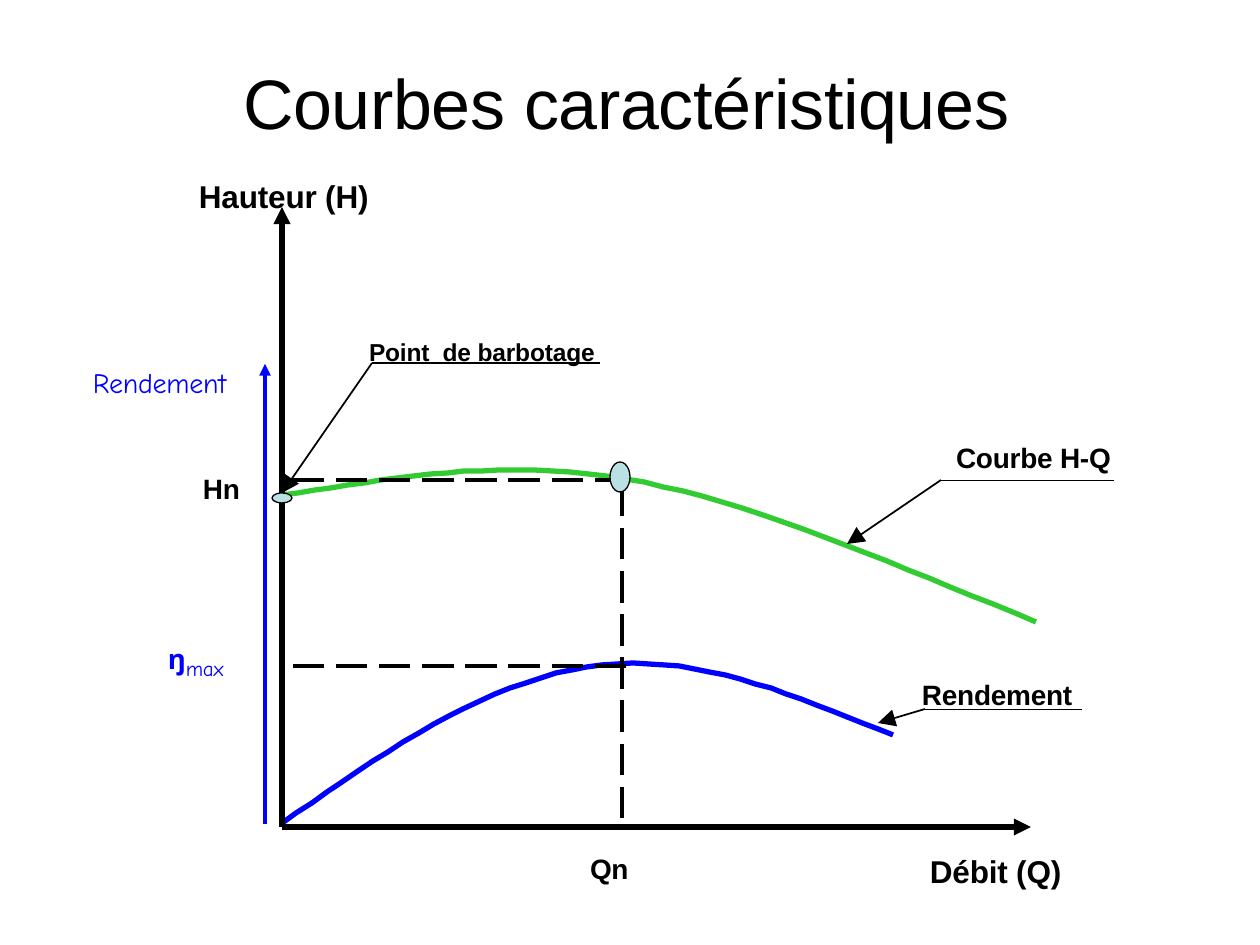
from lxml import etree
from pptx import Presentation
from pptx.dml.color import RGBColor
from pptx.enum.dml import MSO_LINE
from pptx.enum.shapes import MSO_CONNECTOR, MSO_SHAPE
from pptx.enum.text import MSO_ANCHOR, PP_ALIGN
from pptx.oxml.ns import qn
from pptx.util import Pt

STRAIGHT = MSO_CONNECTOR.STRAIGHT
OVAL = MSO_SHAPE.OVAL
DASH = MSO_LINE.LONG_DASH
LEFT, RIGHT, CENTER = PP_ALIGN.LEFT, PP_ALIGN.RIGHT, PP_ALIGN.CENTER
TOP, MIDDLE = MSO_ANCHOR.TOP, MSO_ANCHOR.MIDDLE

SCALE = 914400 / 126
W, H = 1260, 945
STEPS = 20
COLORS = {"black": "000000", "blue": "0000FF", "green": "32CC32", "pale": "BAE0E3"}

TITLE = ("Courbes caractéristiques", (118, 31, 1016, 141))

# text, box, format
LABELS = [
    ("Hauteur (H)", (199, 177, 175, 35), dict(size=18)),
    ("Débit (Q)", (930, 852, 136, 35), dict(size=18)),
    ("Point  de barbotage", (369, 337, 232, 28), dict(size=14)),
    ("Rendement", (93, 366, 136, 32), dict(font="Comic Neue", color="blue", bold=False)),
    ("Courbe H-Q", (951, 441, 160, 32), dict(align=RIGHT)),
    ("Hn", (203, 472, 42, 32), {}),
    ("Rendement", (922, 678, 155, 32), {}),
    ("Qn", (590, 852, 42, 32), {}),
]
ETA = (168, 648, 60, 40)

# start point, then three points for each cubic arc
CURVES = [
    ("blue", [(281, 824), (383, 752), (485, 683), (587, 667),
              (689, 650), (791, 694), (893, 735)]),
    ("green", [(282, 495), (392, 479), (499, 457), (625, 479),
               (751, 500), (893, 564), (1036, 622)]),
]

# from, to, format
AXES = [
    ((282, 827), (282, 207), dict(width=3.25, head="med")),
    ((282, 827), (1031, 827), dict(width=3.25, head="med")),
    ((265, 824), (265, 364), dict(width=2.25, head="med", color="blue")),
]
GUIDES = [
    ((622, 485), (622, 827)),
    ((626, 666), (281, 666)),
    ((626, 480), (281, 480)),
]
MARKS = {"barbotage": (272, 493, 20, 10), "nominal": (610, 462, 20, 30)}

# bend, arrow tip, end of underline, width of underline, mark reached
LEADERS = [
    ((372, 363), (282, 493), 600, 0.75, "barbotage"),
    ((941, 480), (847, 544), 1114, 0.25, None),
    ((925, 709), (878, 723), 1082, 0.25, None),
]


def px(*vals):
    return [round(v * SCALE) for v in vals]


def rgb(name):
    return RGBColor.from_string(COLORS[name])


def write(shape, text, size=16, font="Arial", color="black", bold=True,
          align=LEFT, anchor=TOP, wrap=False, track=-10):
    """Add text to the shape's first paragraph and return the run."""
    frame = shape.text_frame
    frame.margin_left = frame.margin_right = 0
    frame.margin_top = frame.margin_bottom = 0
    frame.word_wrap = wrap
    frame.vertical_anchor = anchor
    para = frame.paragraphs[0]
    para.alignment = align
    run = para.add_run()
    run.text = text
    run.font.size = Pt(size)
    run.font.name = font
    run.font.bold = bold
    run.font.color.rgb = rgb(color)
    run.font._element.set("spc", str(track))
    return run


def link(shapes, start, end, width=1, color="black", head=None, dash=None):
    """Draw a straight line, with an arrowhead of size head at its end."""
    line = shapes.add_connector(STRAIGHT, *px(*start, *end))
    line.line.width = Pt(width)
    line.line.color.rgb = rgb(color)
    if dash:
        line.line.dash_style = dash
    if head:
        etree.SubElement(line.line._get_or_add_ln(), qn("a:tailEnd"),
                         type="triangle", w=head, len=head)
    etree.SubElement(line._element.spPr, qn("a:effectLst"))
    return line


def cubic(a, b, c, d, t):
    s = 1 - t
    return tuple(s**3 * i + 3 * s * s * t * j + 3 * s * t * t * k + t**3 * m
                 for i, j, k, m in zip(a, b, c, d))


def curve(shapes, color, knots):
    dots = [cubic(*knots[i:i + 4], n / STEPS)
            for i in range(0, len(knots) - 1, 3) for n in range(1, STEPS + 1)]
    pen = shapes.build_freeform(*knots[0], scale=SCALE)
    pen.add_line_segments(dots, close=False)
    shape = pen.convert_to_shape()
    shape.fill.background()
    shape.line.color.rgb = rgb(color)
    shape.line.width = Pt(3)
    shape.shadow.inherit = False


def mark(shapes, box):
    shape = shapes.add_shape(OVAL, *px(*box))
    shape.fill.solid()
    shape.fill.fore_color.rgb = rgb("pale")
    shape.line.color.rgb = rgb("black")
    shape.line.width = Pt(0.75)
    shape.shadow.inherit = False
    return shape


def main():
    prs = Presentation()
    prs.slide_width, prs.slide_height = px(W, H)
    slide = prs.slides.add_slide(prs.slide_layouts[5])
    shapes = slide.shapes

    text, box = TITLE
    title = shapes.title
    title.left, title.top, title.width, title.height = px(*box)
    write(title, text, size=40, bold=False, align=CENTER, anchor=MIDDLE,
          wrap=True, track=-20)

    for color, knots in CURVES:
        curve(shapes, color, knots)
    for start, end, look in AXES:
        link(shapes, start, end, **look)
    for start, end in GUIDES:
        link(shapes, start, end, width=2.25, dash=DASH)
    marks = {name: mark(shapes, box) for name, box in MARKS.items()}

    for bend, tip, edge, width, goal in LEADERS:
        link(shapes, bend, (edge, bend[1]), width=width)
        arrow = link(shapes, bend, tip, head="lg")
        if goal:
            arrow.end_connect(marks[goal], 0)

    for text, box, look in LABELS:
        write(shapes.add_textbox(*px(*box)), text, **look)

    eta = shapes.add_textbox(*px(*ETA))
    sign = write(eta, "ŋ", size=27, font="Comic Neue", color="blue")
    sign.font._element.set("baseline", "14000")
    write(eta, "max", size=12, font="Comic Neue", color="blue", bold=False)
    eta.text_frame.paragraphs[0].line_spacing = Pt(21.5)

    prs.save("out.pptx")


if __name__ == "__main__":
    main()
